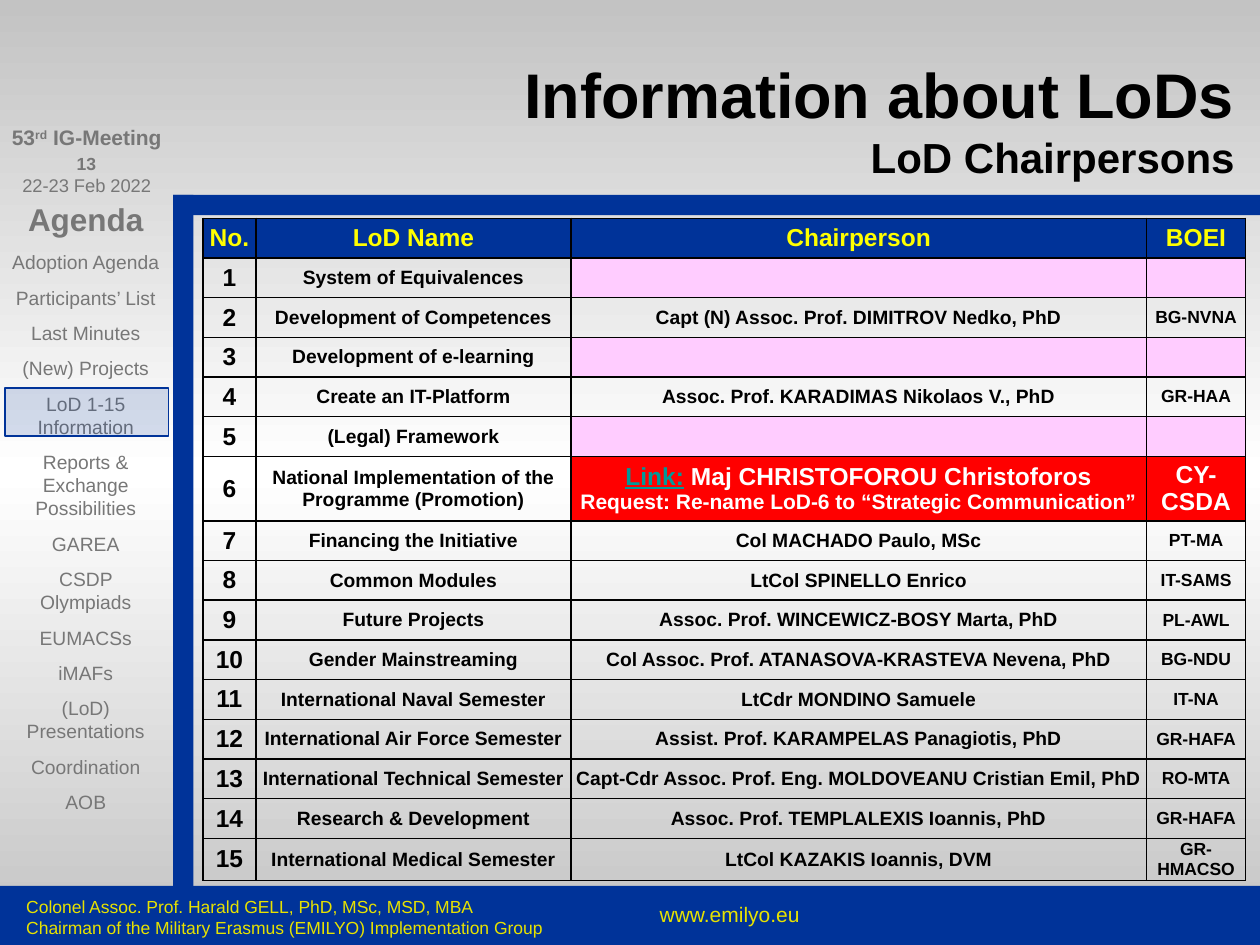
from copy import deepcopy
from lxml import etree
from pptx import Presentation
from pptx.dml.color import RGBColor
from pptx.enum import shapes as shp, text as txt
from pptx.oxml import ns
from pptx.util import Cm, Pt

HUES = {"blue": "003399", "grey": "777777", "gold": "E7E200", "yellow": "FFFF00",
        "pink": "FFCCFF", "red": "FF0000", "teal": "009999", "black": "000000",
        "white": "FFFFFF", "silver": "C3C3C3"}
MID, LEFT, RIGHT = txt.PP_ALIGN.CENTER, txt.PP_ALIGN.LEFT, txt.PP_ALIGN.RIGHT

AGENDA = ["Adoption Agenda", "Participants’ List", "Last Minutes", "(New) Projects",
          "LoD 1-15 Information", "Reports & Exchange Possibilities", "GAREA",
          "CSDP Olympiads", "EUMACSs", "iMAFs", "(LoD) Presentations",
          "Coordination", "AOB"]
HEADS = ["No.", "LoD Name", "Chairperson", "BOEI"]
LODS = [
    ("System of Equivalences", "", ""),
    ("Development of Competences", "Capt (N) Assoc. Prof. DIMITROV Nedko, PhD", "BG-NVNA"),
    ("Development of e-learning", "", ""),
    ("Create an IT-Platform", "Assoc. Prof. KARADIMAS Nikolaos V., PhD", "GR-HAA"),
    ("(Legal) Framework", "", ""),
    ("National Implementation of the Programme (Promotion)",
     "Maj CHRISTOFOROU Christoforos", "CY-CSDA"),
    ("Financing the Initiative", "Col MACHADO Paulo, MSc", "PT-MA"),
    ("Common Modules", "LtCol SPINELLO Enrico", "IT-SAMS"),
    ("Future Projects", "Assoc. Prof. WINCEWICZ-BOSY Marta, PhD", "PL-AWL"),
    ("Gender Mainstreaming", "Col Assoc. Prof. ATANASOVA-KRASTEVA Nevena, PhD", "BG-NDU"),
    ("International Naval Semester", "LtCdr MONDINO Samuele", "IT-NA"),
    ("International Air Force Semester", "Assist. Prof. KARAMPELAS Panagiotis, PhD", "GR-HAFA"),
    ("International Technical Semester",
     "Capt-Cdr Assoc. Prof. Eng. MOLDOVEANU Cristian Emil, PhD", "RO-MTA"),
    ("Research & Development", "Assoc. Prof. TEMPLALEXIS Ioannis, PhD", "GR-HAFA"),
    ("International Medical Semester", "LtCol KAZAKIS Ioannis, DVM", "GR-HMACSO"),
]
FOCUS = 6  # the LoD under discussion


def hue(name):
    return RGBColor.from_string(HUES[name])


def add_run(par, words, size, color, bold=False):
    run = par.add_run()
    run.text = words
    run.font.name, run.font.size, run.font.bold = "Arial", Pt(size), bold
    run.font.color.rgb = hue(color)
    return run


def add_par(frame, align=MID, after=0):
    """Use the first paragraph while it is empty, then add more."""
    par = frame.paragraphs[0]
    if par.runs:
        par = frame.add_paragraph()
    par.alignment = align
    par.space_before, par.space_after = Pt(0), Pt(after)
    return par


def inset(frame, side, top):
    frame.margin_left = frame.margin_right = Cm(side)
    frame.margin_top = frame.margin_bottom = Cm(top)


def add_box(slide, x, y, w, h, wrap=True):
    frame = slide.shapes.add_textbox(Cm(x), Cm(y), Cm(w), Cm(h)).text_frame
    frame.word_wrap = wrap
    return frame


def add_bar(slide, x, y, w, h):
    bar = slide.shapes.add_shape(shp.MSO_SHAPE.RECTANGLE, Cm(x), Cm(y), Cm(w), Cm(h))
    bar.shadow.inherit = False
    bar.fill.solid()
    bar.fill.fore_color.rgb = hue("blue")
    bar.line.fill.background()
    return bar


def place(holder, x, y, w, h):
    holder.left, holder.top, holder.width, holder.height = Cm(x), Cm(y), Cm(w), Cm(h)
    holder.text_frame.auto_size = txt.MSO_AUTO_SIZE.NONE
    return holder.text_frame


def backdrop(slide):
    fill = slide.background.fill
    fill.gradient()
    fill.gradient_angle = 90
    stops = slide.element.find(".//" + ns.qn("a:gsLst"))
    stops.insert(1, deepcopy(stops[0]))
    for stop, spot, name in zip(fill.gradient_stops, (0, 0.5, 1), ("silver", "white", "silver")):
        stop.position = spot
        stop.color.rgb = hue(name)


def header(slide, x, y, w, h):
    frame = place(slide.shapes.title, x, y, w, h)
    inset(frame, 0, 0)
    frame.vertical_anchor = txt.MSO_ANCHOR.BOTTOM
    par = add_par(frame, RIGHT)
    add_run(par, "Information about LoDs", 36, "black", True)
    par.add_line_break()
    add_run(par, "LoD Chairpersons", 24, "black", True)


def meeting(slide, x, y, w, h):
    frame = add_box(slide, x, y, w, h)
    inset(frame, 0, 0)
    par = add_par(frame)
    add_run(par, "53", 12, "grey", True)
    power = add_run(par, "rd", 12, "grey", True)
    power.font._element.set("baseline", "30000")
    add_run(par, " IG-Meeting", 12, "grey", True)
    date = add_par(frame)
    date.space_before = Pt(14)
    add_run(date, "22-23 Feb 2022", 10.5, "grey")
    # Slide number sits between the two lines
    page = add_box(slide, x + 1.12, y + 0.44, 1.24, 0.69, wrap=False)
    add_run(add_par(page), "13", 10, "grey", True)


def sidebar(slide, x, y, w, h):
    frame = place(slide.placeholders[1], x, y, w, h)
    inset(frame, 0.1, 0.1)
    for item in ["Agenda"] + AGENDA:
        par = add_par(frame, after=7)
        props = par._p.get_or_add_pPr()
        props.set("marL", "0")
        props.set("indent", "0")
        etree.SubElement(props, ns.qn("a:buNone"))
        top = item == "Agenda"
        add_run(par, item, 18 if top else 11, "grey", top)
    # Marker on the current topic
    mark = add_bar(slide, x - 0.03, y + 3.88, w + 0.1, 0.97)
    color = mark.fill._xPr.find(".//" + ns.qn("a:srgbClr"))
    etree.SubElement(color, ns.qn("a:alpha")).set("val", "16000")
    mark.line.color.rgb = hue("blue")
    mark.line.width = Pt(0.75)


def footer(slide, x, y, w, h):
    add_bar(slide, x, y, w, h)
    frame = add_box(slide, x + 0.28, y + 0.07, 11.13, 0.89)
    for line in ("Colonel Assoc. Prof. Harald GELL, PhD, MSc, MSD, MBA",
                 "Chairman of the Military Erasmus (EMILYO) Implementation Group"):
        add_run(add_par(frame, LEFT), line, 10, "gold")
    site = add_box(slide, x + 12.45, y + 0.18, 4.52, 0.89)
    add_run(add_par(site), "www.emilyo.eu", 12, "gold")


def style(cell, fill):
    inset(cell, 0.08, 0)
    cell.vertical_anchor = txt.MSO_ANCHOR.MIDDLE
    props = cell._tc.get_or_add_tcPr()
    for side in ("lnL", "lnR", "lnT", "lnB"):
        line = etree.SubElement(props, ns.qn("a:" + side), w=str(Pt(1)))
        solid = etree.SubElement(line, ns.qn("a:solidFill"))
        etree.SubElement(solid, ns.qn("a:srgbClr"), val=HUES["black"])
    if fill:
        cell.fill.solid()
        cell.fill.fore_color.rgb = hue(fill)
    else:
        cell.fill.background()


def chairs(slide, x, y, w, h):
    rows = [HEADS] + [(str(n), *lod) for n, lod in enumerate(LODS, 1)]
    table = slide.shapes.add_table(len(rows), 4, Cm(x), Cm(y), Cm(w), Cm(h)).table
    table.first_row = table.horz_banding = False
    for col, wide in zip(table.columns, (1.07, 6.35, 11.6, 2)):
        col.width = Cm(wide)
    for r, row in enumerate(rows):
        table.rows[r].height = Cm(1.3 if r == FOCUS else 0.8)
        for c, words in enumerate(row):
            cell = table.cell(r, c)
            size, color, fill = (14, 11, 11, 10)[c], "black", None
            if r == 0:
                size, color, fill = 14, "yellow", "blue"
            elif r == FOCUS and c > 1:
                size, color, fill = 14, "white", "red"
            elif not words:
                fill = "pink"
            style(cell, fill)
            if not words:
                continue
            par = add_par(cell.text_frame)
            if r == FOCUS and c == 2:
                add_run(par, "Link:", size, "teal", True).font.underline = True
                add_run(par, " " + words, size, color, True)
                add_run(add_par(cell.text_frame),
                        "Request: Re-name LoD-6 to “Strategic Communication”", 12, color, True)
            else:
                add_run(par, words, size, color, True)


def main():
    deck = Presentation()
    deck.slide_width, deck.slide_height = Cm(25.4), Cm(19.05)
    slide = deck.slides.add_slide(deck.slide_layouts[1])
    backdrop(slide)
    # Frame bars
    add_bar(slide, 3.49, 3.93, 0.41, 14.24)
    add_bar(slide, 3.49, 3.93, 21.91, 0.41)
    # Regions
    header(slide, 3.5, 0.48, 21.39, 3.18)
    meeting(slide, 0, 2.51, 3.5, 1.68)
    sidebar(slide, 0.13, 3.94, 3.2, 13.79)
    footer(slide, 0, 17.86, 25.4, 1.19)
    chairs(slide, 4.09, 4.4, 21.02, 13.3)
    deck.save("out.pptx")


if __name__ == "__main__":
    main()
